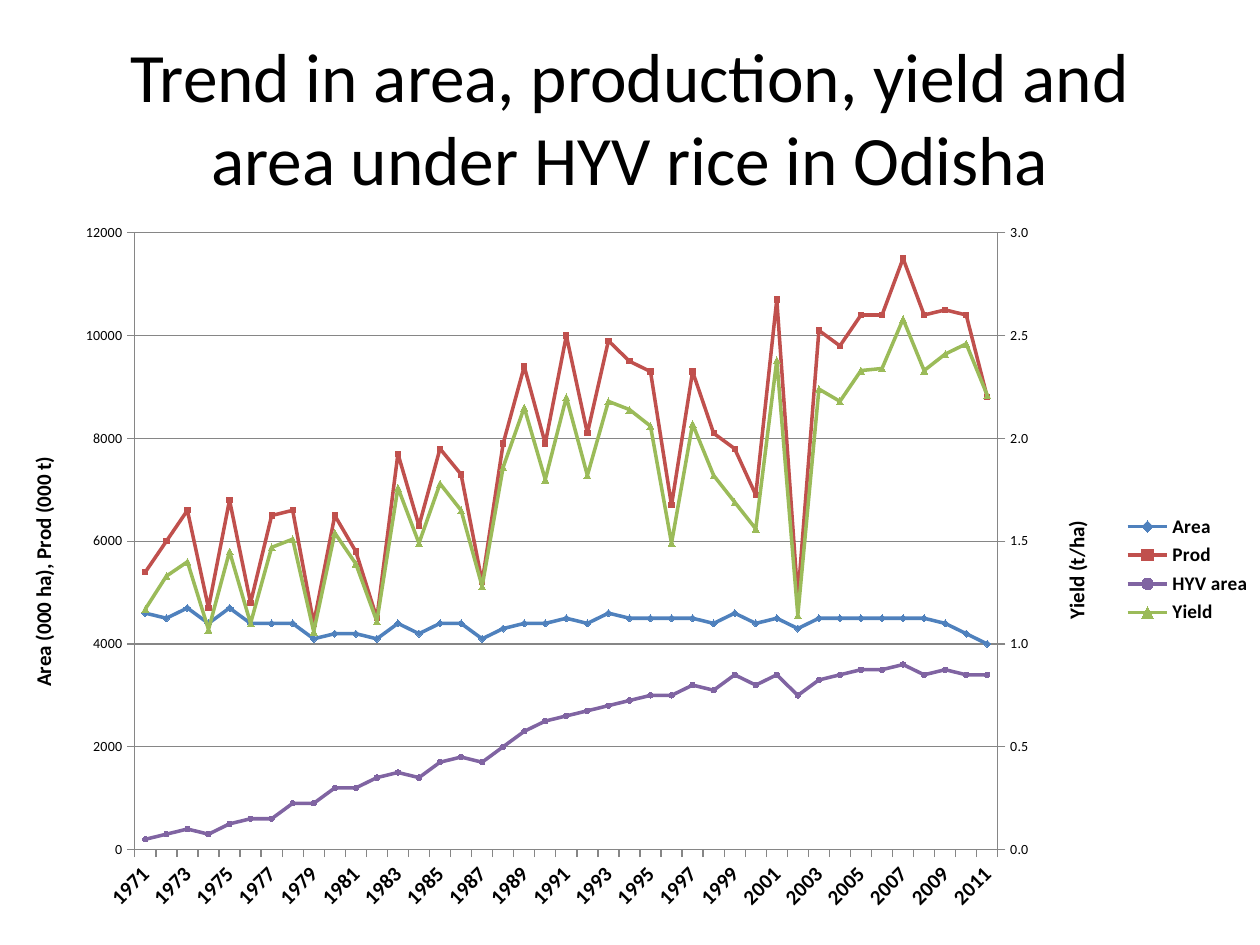
from copy import deepcopy

from lxml.etree import Element, SubElement
from pptx import Presentation
from pptx.chart.data import CategoryChartData
from pptx.dml.color import RGBColor
from pptx.enum.chart import XL_CHART_TYPE as ChartType
from pptx.enum.chart import XL_LEGEND_POSITION as LegendPosition
from pptx.enum.chart import XL_MARKER_STYLE as Marker
from pptx.enum.chart import XL_TICK_MARK as TickMark
from pptx.enum.text import MSO_ANCHOR as Anchor
from pptx.enum.text import PP_ALIGN as Align
from pptx.oxml.ns import qn
from pptx.util import Pt

FONT = "Calibri"
BLACK = "000000"
GREY = "868686"
YEARS = [str(year) for year in range(1971, 2012)]

AREA = [4600, 4500, 4700, 4400, 4700, 4400, 4400, 4400, 4100, 4200, 4200, 4100, 4400, 4200,
        4400, 4400, 4100, 4300, 4400, 4400, 4500, 4400, 4600, 4500, 4500, 4500, 4500, 4400,
        4600, 4400, 4500, 4300, 4500, 4500, 4500, 4500, 4500, 4500, 4400, 4200, 4000]
PRODUCTION = [5400, 6000, 6600, 4700, 6800, 4800, 6500, 6600, 4400, 6500, 5800, 4500, 7700, 6300,
              7800, 7300, 5200, 7900, 9400, 7900, 10000, 8100, 9900, 9500, 9300, 6700, 9300, 8100,
              7800, 6900, 10700, 4900, 10100, 9800, 10400, 10400, 11500, 10400, 10500, 10400, 8800]
HYV_AREA = [200, 300, 400, 300, 500, 600, 600, 900, 900, 1200, 1200, 1400, 1500, 1400,
            1700, 1800, 1700, 2000, 2300, 2500, 2600, 2700, 2800, 2900, 3000, 3000, 3200, 3100,
            3400, 3200, 3400, 3000, 3300, 3400, 3500, 3500, 3600, 3400, 3500, 3400, 3400]
YIELD = [1.17, 1.33, 1.4, 1.07, 1.45, 1.1, 1.47, 1.51, 1.06, 1.54, 1.39, 1.11, 1.76, 1.49,
         1.78, 1.65, 1.28, 1.86, 2.15, 1.8, 2.2, 1.82, 2.18, 2.14, 2.06, 1.49, 2.07, 1.82,
         1.69, 1.56, 2.38, 1.14, 2.24, 2.18, 2.33, 2.34, 2.58, 2.33, 2.41, 2.46, 2.21]

SERIES = [
    ("Area", AREA, "4F81BD", Marker.DIAMOND, 4),
    ("Prod", PRODUCTION, "C0504D", Marker.SQUARE, 3),
    ("HYV area", HYV_AREA, "8064A2", Marker.CIRCLE, 3),
    ("Yield", YIELD, "9BBB59", Marker.TRIANGLE, 4),
]


def color(value):
    """Return the colour for a hex string."""
    return RGBColor.from_string(value)


def format_font(font, size, bold=False, fill=BLACK):
    """Set the typeface, size, weight and colour of a font."""
    font.name, font.size, font.bold = FONT, Pt(size), bold
    font.color.rgb = color(fill)


def write_text(text_frame, text, align=Align.CENTER, **font_format):
    """Put one formatted paragraph into a text frame."""
    paragraph = text_frame.paragraphs[0]
    paragraph.alignment = align
    run = paragraph.add_run()
    run.text = text
    format_font(run.font, **font_format)


def add_title(slide, text):
    """Fill and place the title placeholder."""
    title = slide.shapes.title
    title.left, title.top, title.width, title.height = Pt(36), Pt(21.6), Pt(648), Pt(90)
    title.text_frame.vertical_anchor = Anchor.MIDDLE
    title.text_frame.word_wrap = True
    write_text(title.text_frame, text, size=39.6)


def set_layout(parent, **fractions):
    """Give a chart part a manual layout in fractions of the chart."""
    for old_layout in parent.findall(qn("c:layout")):
        parent.remove(old_layout)
    layout = Element(qn("c:layout"))
    manual = SubElement(layout, qn("c:manualLayout"))
    if "w" in fractions:
        SubElement(manual, qn("c:layoutTarget")).set("val", "inner")
    for key in ("x", "y"):
        SubElement(manual, qn(f"c:{key}Mode")).set("val", "edge")
    for key, value in fractions.items():
        SubElement(manual, qn(f"c:{key}")).set("val", str(value))
    overlay = parent.find(qn("c:overlay"))
    if overlay is None:
        parent.insert(0, layout)
    else:
        overlay.addprevious(layout)


def format_axis(axis, size, bold=False):
    """Set the line, ticks and labels of an axis."""
    axis.major_tick_mark, axis.minor_tick_mark = TickMark.OUTSIDE, TickMark.NONE
    axis.format.line.color.rgb = color(GREY)
    axis.format.line.width = Pt(0.75)
    format_font(axis.tick_labels.font, size, bold)


def format_category_axis(axis):
    """Show every second year, slanted."""
    format_axis(axis, 12, True)
    element = axis._element
    element.find(qn("c:txPr")).find(qn("a:bodyPr")).set("rot", "-2700000")
    skip = Element(qn("c:tickLblSkip"))
    skip.set("val", "2")
    element.find(qn("c:noMultiLvlLbl")).addprevious(skip)


def format_value_axis(axis, title):
    """Set the scale, gridlines and rotated title of the left axis."""
    format_axis(axis, 8)
    axis.minimum_scale, axis.maximum_scale, axis.major_unit = 0, 12000, 2000
    axis.tick_labels.number_format = "0"
    axis.tick_labels.number_format_is_linked = False
    axis.has_major_gridlines = True
    axis.major_gridlines.format.line.color.rgb = color(GREY)
    axis.major_gridlines.format.line.width = Pt(0.75)
    text_frame = axis.axis_title.text_frame
    write_text(text_frame, title, size=12, bold=True)
    body = text_frame._txBody.find(qn("a:bodyPr"))
    body.set("rot", "-5400000")
    body.set("vert", "horz")
    set_layout(axis.axis_title._element, x=0.02, y=0.34)


def set_value(element, tag, value):
    """Set the val attribute of the first descendant with a tag."""
    next(element.iter(qn(tag))).set("val", value)


def move_last_series_right(chart, title):
    """Plot the last series against a second value axis on the right."""
    plot_area = chart._chartSpace.chart.plotArea
    left_plot, category, value = (
        plot_area.find(qn(tag)) for tag in ("c:lineChart", "c:catAx", "c:valAx"))
    right_plot, right_category, right_value = map(deepcopy, (left_plot, category, value))
    left_plot.remove(left_plot.findall(qn("c:ser"))[-1])
    for series in right_plot.findall(qn("c:ser"))[:-1]:
        right_plot.remove(series)
    for axis_id, number in zip(right_plot.findall(qn("c:axId")), ("101", "102")):
        axis_id.set("val", number)
    for axis, own, other in ((right_category, "101", "102"), (right_value, "102", "101")):
        set_value(axis, "c:axId", own)
        set_value(axis, "c:crossAx", other)
    set_value(right_category, "c:delete", "1")
    right_value.remove(right_value.find(qn("c:majorGridlines")))
    for tag, setting in (("c:max", "3"), ("c:majorUnit", "0.5"),
                         ("c:axPos", "r"), ("c:crosses", "max")):
        set_value(right_value, tag, setting)
    right_value.find(qn("c:numFmt")).set("formatCode", "0.0")
    next(right_value.iter(qn("a:t"))).text = title
    set_layout(right_value.find(qn("c:title")), x=0.84, y=0.43)
    left_plot.addnext(right_plot)
    value.addnext(right_value)
    right_value.addnext(right_category)


def format_series(series, fill, marker, size):
    """Set the line and marker of a series."""
    series.smooth = False
    series.format.line.color.rgb = color(fill)
    series.format.line.width = Pt(2)
    series.marker.style, series.marker.size = marker, size
    series.marker.format.fill.solid()
    series.marker.format.fill.fore_color.rgb = color(fill)
    series.marker.format.line.color.rgb = color(fill)


def add_trend_chart(slide):
    """Add the line chart with two value axes."""
    data = CategoryChartData()
    data.categories = YEARS
    for name, values, *_ in SERIES:
        data.add_series(name, values)
    chart = slide.shapes.add_chart(
        ChartType.LINE_MARKERS, Pt(0), Pt(120), Pt(720), Pt(408), data).chart
    format_font(chart.font, 8)
    chart.has_title = False
    chart.plots[0].vary_by_categories = False
    for series, (_, _, fill, marker, size) in zip(chart.plots[0].series, SERIES):
        format_series(series, fill, marker, size)
    format_category_axis(chart.category_axis)
    format_value_axis(chart.value_axis, "Area (000 ha), Prod (000 t)")
    chart.has_legend = True
    chart.legend.position = LegendPosition.RIGHT
    chart.legend.include_in_layout = False
    format_font(chart.legend.font, 11, True)
    set_layout(chart.legend._element, x=0.89, y=0.42)
    move_last_series_right(chart, "Yield (t/ha)")
    set_layout(chart._chartSpace.chart.plotArea, x=0.107, y=0.032, w=0.685, h=0.864)


def main():
    """Build and save the slide."""
    presentation = Presentation()
    presentation.slide_width, presentation.slide_height = Pt(720), Pt(540)
    slide = presentation.slides.add_slide(presentation.slide_layouts[5])
    add_title(slide, "Trend in area, production, yield and area under HYV rice in Odisha")
    add_trend_chart(slide)
    presentation.save("out.pptx")


if __name__ == "__main__":
    main()
